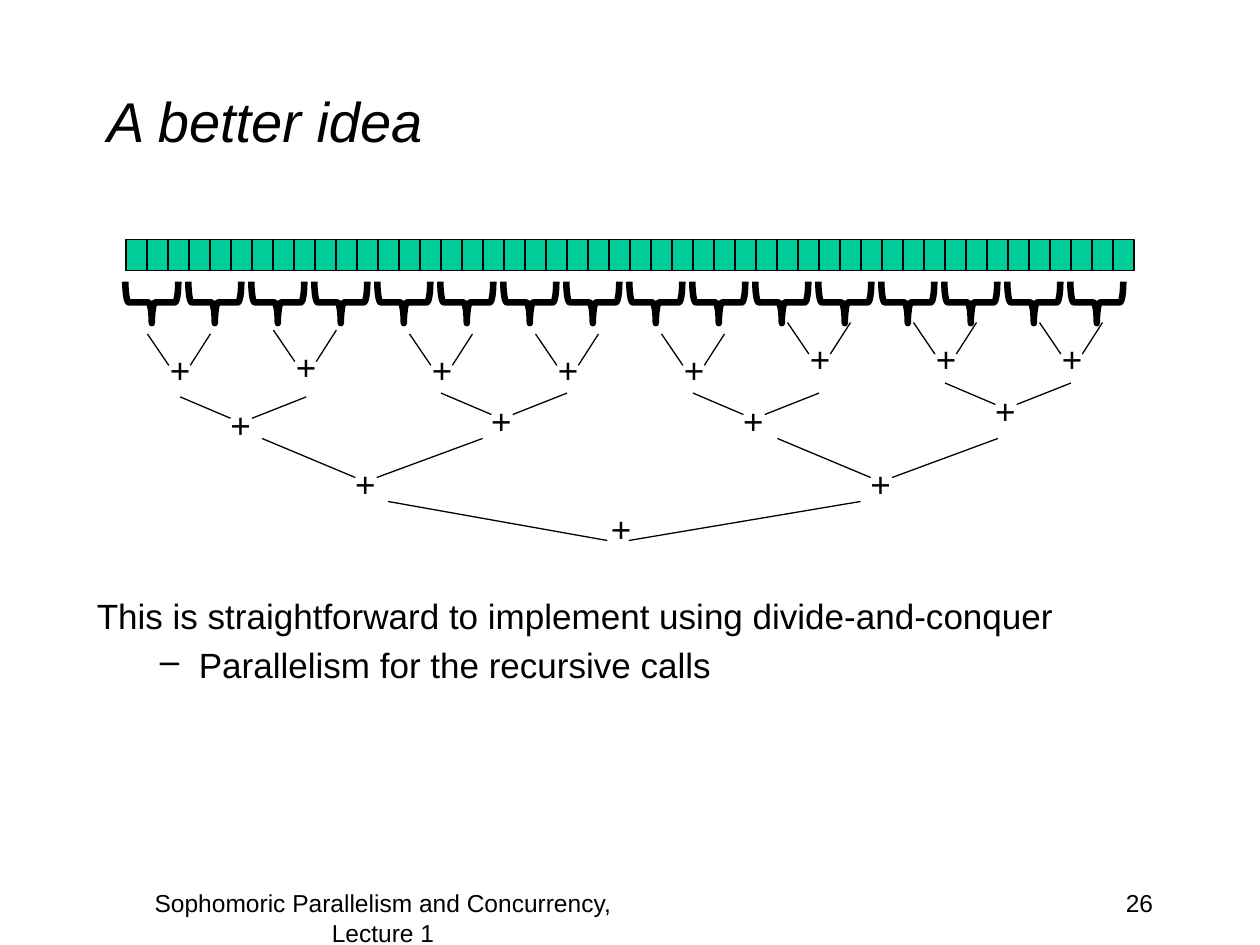
"""Build the slide on summing an array with a divide-and-conquer tree."""
from dataclasses import dataclass

from lxml.etree import SubElement
from pptx import Presentation
from pptx.dml.color import RGBColor
from pptx.enum.shapes import MSO_CONNECTOR as Connector, MSO_SHAPE as Shape
from pptx.enum.text import MSO_ANCHOR as Anchor, MSO_AUTO_SIZE as AutoSize, PP_ALIGN as Align
from pptx.oxml.ns import qn
from pptx.util import Inches, Pt


@dataclass(frozen=True)
class Theme:
    font: str = "Arial"
    ink: RGBColor = RGBColor(0, 0, 0)
    cell: RGBColor = RGBColor(0x00, 0xCC, 0x99)
    title: int = 32
    body: int = 20
    footer: int = 14
    thin: float = 0.75
    thick: float = 3.75


theme = Theme()


def add_run(paragraph, text, size, italic=False):
    run = paragraph.add_run()
    run.text = text
    run.font.name = theme.font
    run.font.size = Pt(size)
    run.font.italic = italic
    run.font.color.rgb = theme.ink


def add_text(left, top, width, height, text, size, align=Align.LEFT, wrap=True):
    box = slide.shapes.add_textbox(Inches(left), Inches(top), Inches(width), Inches(height))
    box.text_frame.word_wrap = wrap
    paragraph = box.text_frame.paragraphs[0]
    paragraph.alignment = align
    add_run(paragraph, text, size)
    return box.text_frame


presentation = Presentation()
presentation.slide_width = Inches(10)
presentation.slide_height = Inches(7.5)
slide = presentation.slides.add_slide(presentation.slide_layouts[5])

title = slide.shapes.title
title.left, title.top = Inches(0.75), Inches(0.33)
title.width, title.height = Inches(8.5), Inches(1.25)
title.text_frame.vertical_anchor = Anchor.MIDDLE
title.text_frame.auto_size = AutoSize.NONE
title.text_frame.paragraphs[0].alignment = Align.LEFT
add_run(title.text_frame.paragraphs[0], "A better idea", theme.title, italic=True)

body = add_text(0.67, 4.67, 8.5, 0.92,
                "This is straightforward to implement using divide-and-conquer", theme.body)
bullet = body.add_paragraph()
bullet.level = 1
add_run(bullet, "Parallelism for the recursive calls", theme.body)
for paragraph, margin, indent in zip(body.paragraphs, (0.38, 0.81), (-0.38, -0.31)):
    paragraph.space_before = Pt(4)
    properties = paragraph._p.get_or_add_pPr()
    properties.set("marL", str(Inches(margin)))
    properties.set("indent", str(Inches(indent)))
SubElement(bullet._p.pPr, qn("a:buChar")).set("char", "–")

add_text(7.17, 7, 2.08, 0.5, "26", theme.footer, Align.RIGHT)
add_text(0.83, 7, 4.42, 0.5, "Sophomoric Parallelism and Concurrency, Lecture 1",
         theme.footer, Align.CENTER)

cell_count, cell_width = 48, 1 / 6
for index in range(cell_count):
    cell = slide.shapes.add_shape(Shape.RECTANGLE, Inches(1 + index * cell_width), Inches(1.9),
                                  Inches(cell_width), Inches(0.25))
    cell.shadow.inherit = False
    cell.fill.solid()
    cell.fill.fore_color.rgb = theme.cell
    cell.line.color.rgb = theme.ink
    cell.line.width = Pt(theme.thin)

for index in range(cell_count // 3):
    brace = slide.shapes.add_shape(Shape.LEFT_BRACE, Inches(1.04 + index / 2), Inches(2.19),
                                   Inches(0.33), Inches(0.42))
    brace.rotation = 270
    brace.shadow.inherit = False
    brace.fill.background()
    brace.line.color.rgb = theme.ink
    brace.line.width = Pt(theme.thick)

# span, join, drop, label offset, then the left and top of every node
tree_levels = [
    (0.5, 0.17, 0.25, (0.08, 0.07), [(1.17, 2.65), (2.17, 2.62), (3.25, 2.65), (4.25, 2.65),
                                     (5.25, 2.65), (6.25, 2.56), (7.25, 2.56), (8.25, 2.56)]),
    (1, 0.4, 0.17, (0.3, 0), [(1.43, 3.15), (3.5, 3.12), (5.5, 3.12), (7.5, 3.04)]),
    (1.75, 0.74, 0.31, (0.64, 0.14), [(2.08, 3.48), (6.17, 3.48)]),
    (3.75, 1.74, 0.31, (1.67, 0), [(3.08, 3.98)]),
]
join_gap = 0.17
for span, join, drop, (label_x, label_y), nodes in tree_levels:
    for left, top in nodes:
        for start, end in ((left, left + join), (left + span, left + join + join_gap)):
            branch = slide.shapes.add_connector(Connector.STRAIGHT, Inches(start), Inches(top),
                                                Inches(end), Inches(top + drop))
            branch.line.color.rgb = theme.ink
            branch.line.width = Pt(theme.thin)
            SubElement(branch._element.spPr, qn("a:effectLst"))
        label = add_text(left + label_x, top + label_y, 0.36, 0.44, "+", theme.body, wrap=False)
        label.auto_size = AutoSize.SHAPE_TO_FIT_TEXT

presentation.save("out.pptx")
